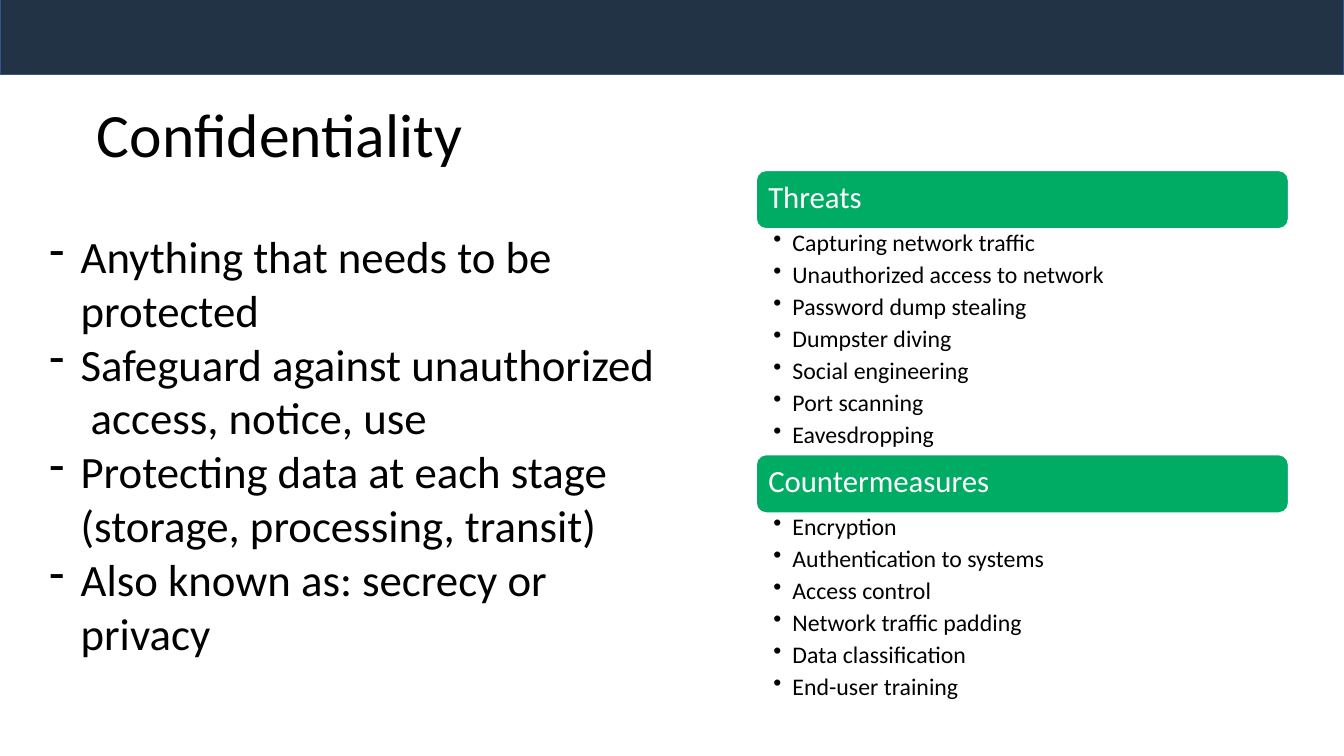
from dataclasses import dataclass

from lxml import etree
from pptx import Presentation
from pptx.dml.color import RGBColor
from pptx.enum import shapes, text
from pptx.oxml import ns
from pptx.util import Inches, Pt

NAVY = RGBColor(0x22, 0x33, 0x46)
BLUE = RGBColor(0x32, 0x54, 0x91)
GREEN = RGBColor(0x00, 0xAC, 0x64)
WHITE = RGBColor(0xFF, 0xFF, 0xFF)
BLACK = RGBColor(0x00, 0x00, 0x00)


@dataclass
class Style:
    size: float
    color: RGBColor = BLACK
    indent: float = 0
    hanging: float = 0
    bullet: str = ""


@dataclass
class Section:
    heading: str
    top: float
    items: list[str]


TITLE = Style(44)
POINT = Style(32, indent=0.33, hanging=0.31, bullet="-")
HEADING = Style(22, WHITE, indent=0.01)
ITEM = Style(17, indent=0.25, hanging=0.19, bullet="•")

POINTS = [
    "Anything that needs to be  protected",
    "Safeguard against unauthorized  access, notice, use",
    "Protecting data at each stage  (storage, processing, transit)",
    "Also known as: secrecy or privacy",
]

SECTIONS = [
    Section("Threats", 1.69, [
        "Capturing network traffic",
        "Unauthorized access to network",
        "Password dump stealing",
        "Dumpster diving",
        "Social engineering",
        "Port scanning",
        "Eavesdropping",
    ]),
    Section("Countermeasures", 4.51, [
        "Encryption",
        "Authentication to systems",
        "Access control",
        "Network traffic padding",
        "Data classification",
        "End-user training",
    ]),
]


def add_panel(page, kind, left: float, top: float, width: float, height: float,
              fill: RGBColor, line: RGBColor):
    panel = page.shapes.add_shape(
        kind, Inches(left), Inches(top), Inches(width), Inches(height))
    panel.shadow.inherit = False
    panel.fill.solid()
    panel.fill.fore_color.rgb = fill
    panel.line.color.rgb = line
    panel.line.width = Pt(1)
    return panel


def add_frame(page, left: float, top: float, width: float, height: float,
              inset: float = 0):
    box = page.shapes.add_textbox(
        Inches(left), Inches(top), Inches(width), Inches(height))
    frame = box.text_frame
    frame.word_wrap = True
    frame.margin_left = frame.margin_right = frame.margin_bottom = 0
    frame.margin_top = Inches(inset)
    return frame


def add_para(frame, wording: str, style: Style, before: float = 0):
    first = frame.paragraphs[0]
    para = frame.add_paragraph() if first.runs else first
    para.add_run().text = wording
    para.space_before = Pt(before)
    props = para._p.get_or_add_pPr()
    props.set("marL", str(Inches(style.indent)))
    props.set("indent", str(Inches(-style.hanging)))
    if style.bullet:
        etree.SubElement(props, ns.qn("a:buChar"), char=style.bullet)
    para.font.name = "Calibri"
    para.font.size = Pt(style.size)
    para.font.color.rgb = style.color
    return para


def add_sections(page) -> None:
    for section in SECTIONS:
        banner = add_panel(page, shapes.MSO_SHAPE.ROUNDED_RECTANGLE,
                           7.5, section.top, 5.28, 0.58, GREEN, WHITE)
        banner.adjustments[0] = 0.17
    frame = add_frame(page, 7.61, 1.58, 3.35, 5.39, inset=0.18)
    for number, section in enumerate(SECTIONS):
        add_para(frame, section.heading, HEADING, 9.6 if number else 0)
        for position, item in enumerate(section.items):
            add_para(frame, item, ITEM, 2.4 if position else 9.6)


def main() -> None:
    deck = Presentation()
    deck.slide_width = Inches(13.33)
    deck.slide_height = Inches(7.5)
    page = deck.slides.add_slide(deck.slide_layouts[6])

    add_panel(page, shapes.MSO_SHAPE.RECTANGLE, 0, -0.04, 13.33, 0.78, NAVY, BLUE)

    points = add_frame(page, 0.47, 2.26, 6.03, 4.32, inset=0.01)
    for point in POINTS:
        add_para(points, point, POINT)

    add_sections(page)

    title = add_frame(page, 0.96, 0.64, 12.37, 1.45)
    title.vertical_anchor = text.MSO_ANCHOR.MIDDLE
    add_para(title, "Confidentiality", TITLE).line_spacing = 0.9

    deck.save("out.pptx")


if __name__ == "__main__":
    main()
